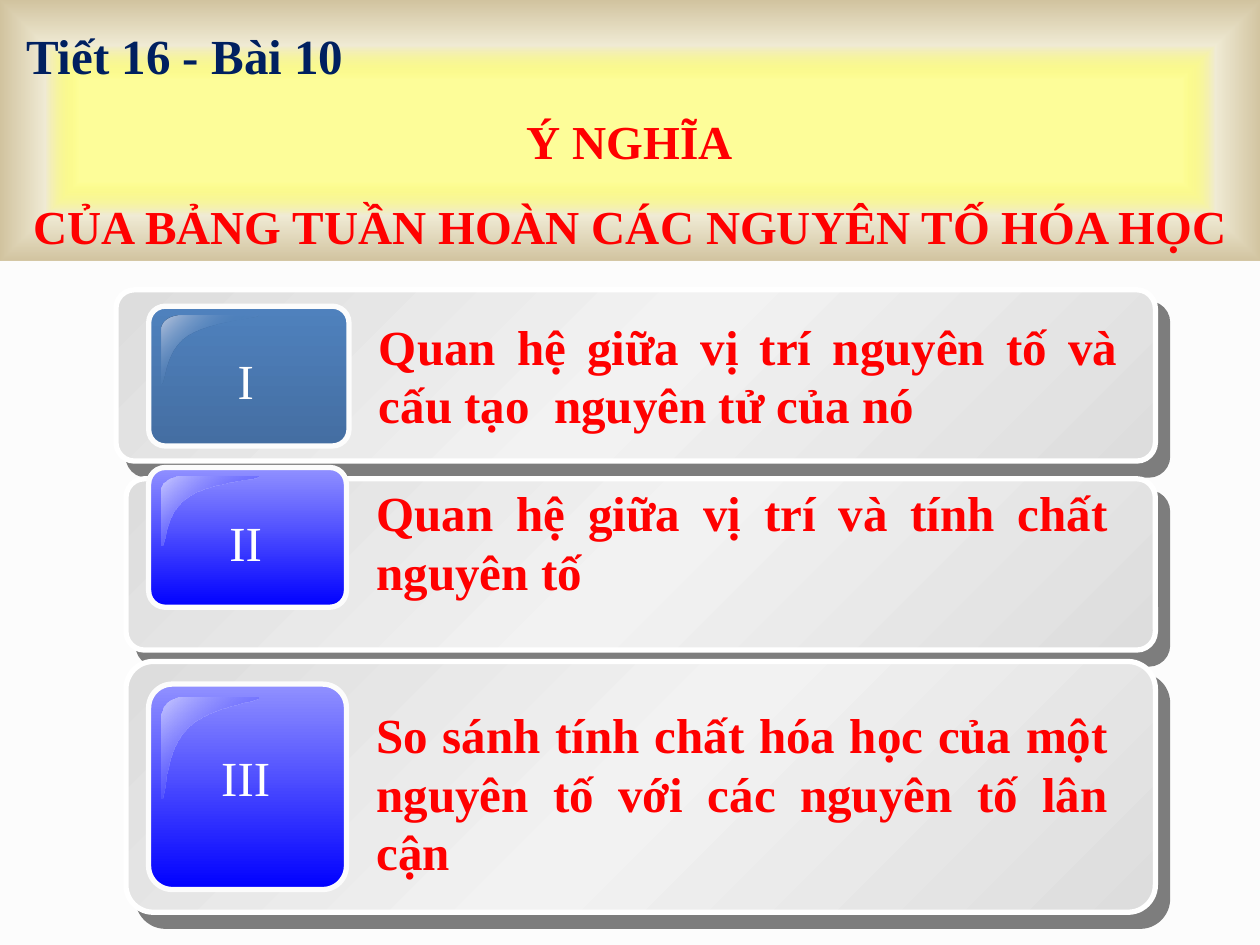
from lxml import etree
from pptx import Presentation
from pptx.dml.color import RGBColor
from pptx.enum.shapes import MSO_SHAPE as Shape
from pptx.enum.text import MSO_ANCHOR as Anchor, PP_ALIGN as Align
from pptx.oxml import parse_xml
from pptx.oxml.ns import nsdecls, qn
from pptx.util import Inches, Pt

FONT = "Times New Roman"
RED, NAVY, WHITE, PAPER = "FF0000", "002060", "FFFFFF", "FCFCFC"

# Header: text, size, colour, alignment, line spacing
HEADER = [
    ("Tiết 16 - Bài 10", 28, NAVY, Align.LEFT, 1),
    ("Ý NGHĨA", 27, RED, Align.CENTER, 1.5),
    ("CỦA BẢNG TUẦN HOÀN CÁC NGUYÊN TỐ HÓA HỌC", 27, RED, Align.CENTER, 1.5),
]

# Gradient stops: position, colour, opacity in percent
HEADER_STOPS = [(39, "FFFF00", 39), (65, "F0EBD5", 100), (100, "D1C39F", 100)]
CARD_STOPS = [(0, "DDDDDD", 100), (50, "F2F2F2", 100), (100, "DDDDDD", 100)]
STEEL = {
    "tile": [(0, "4F81BD", 100), (100, "446EA2", 100)],
    "gloss": [(0, "BBC7DE", 100), (50, "4F81BD", 0), (100, "BBC7DE", 100)],
}
BLUE = {
    "tile": [(0, "9191FF", 100), (100, "0000FF", 100)],
    "gloss": [(0, "C9C9FF", 100), (100, "0000FF", 0)],
}

# Boxes are left, top, width, height in inches
SECTIONS = [
    dict(numeral="I", text="Quan hệ giữa vị trí nguyên tố và cấu tạo  nguyên tử của nó",
         colours=STEEL, card=(0.92, 2.3, 8.25, 1.36), tile=(1.18, 2.43, 1.59, 1.11),
         numeral_top=2.73, text_box=(2.91, 2.46, 6.06, 1.04)),
    dict(numeral="II", text="Quan hệ giữa vị trí và tính chất nguyên tố",
         colours=BLUE, card=(1, 3.8, 8.17, 1.36), tile=(1.18, 3.71, 1.57, 1.11),
         numeral_top=4.02, text_box=(2.89, 3.78, 6, 1.04)),
    dict(numeral="III", text="So sánh tính chất hóa học của một nguyên tố với các nguyên tố lân cận",
         colours=BLUE, card=(1, 5.25, 8.17, 1.99), tile=(1.18, 5.43, 1.57, 1.63),
         numeral_top=5.88, text_box=(2.89, 5.54, 6, 1.6)),
]

# Gloss outline as cubic curves in fractions of its own box
GLOSS_CURVES = [
    [(0.2, 0), (0.09, 0), (0, 0.09), (0, 0.2)],
    [(0, 0.98), (0.05, 1), (0.02, 0.52), (0.27, 0.29)],
    [(0.27, 0.29), (0.52, 0.07), (1, 0.05), (0.98, 0)],
]


def rgb(colour):
    return RGBColor.from_string(colour)


def inches(box):
    return [Inches(value) for value in box]


def gradient(shape, stops, angle=None):
    """Linear fill at an angle, or a fill towards the centre without one."""
    stop_xml = "".join(
        f'<a:gs pos="{pos * 1000}"><a:srgbClr val="{colour}">'
        f'<a:alpha val="{opacity * 1000}"/></a:srgbClr></a:gs>'
        for pos, colour, opacity in stops)
    if angle is None:
        way = ('<a:path path="shape"><a:fillToRect l="50000" t="50000" '
               'r="50000" b="50000"/></a:path>')
    else:
        way = f'<a:lin ang="{angle * 60000}" scaled="1"/>'
    geometry = shape._element.spPr.find(qn("a:prstGeom"))
    if geometry is None:
        geometry = shape._element.spPr.find(qn("a:custGeom"))
    geometry.addnext(parse_xml(
        f'<a:gradFill {nsdecls("a")} rotWithShape="1">'
        f'<a:gsLst>{stop_xml}</a:gsLst>{way}</a:gradFill>'))


def outline(shape, colour=None):
    shape.shadow.inherit = False
    if colour:
        shape.line.color.rgb = rgb(colour)
        shape.line.width = Pt(3)
    else:
        shape.line.fill.background()


def drop_shadow(shape):
    effects = shape._element.spPr.find(qn("a:effectLst"))
    cast = etree.SubElement(effects, qn("a:outerShdw"), blurRad="0",
                            dist=str(Pt(10.6)), dir=str(49 * 60000),
                            algn="ctr", rotWithShape="0")
    black = etree.SubElement(cast, qn("a:srgbClr"), val="000000")
    etree.SubElement(black, qn("a:alpha"), val="50000")


def style(paragraph, size, colour, align, bold=True):
    paragraph.alignment = align
    font = paragraph.font
    font.name, font.size, font.bold = FONT, Pt(size), bold
    font.color.rgb = rgb(colour)


def add_panel(shapes, box, corner, stops, angle, line):
    panel = shapes.add_shape(Shape.ROUNDED_RECTANGLE, *inches(box))
    panel.adjustments[0] = corner
    gradient(panel, stops, angle)
    outline(panel, line)
    return panel


def add_label(shapes, box, text, colour, align, bold, wrap):
    frame = shapes.add_textbox(*inches(box)).text_frame
    frame.word_wrap = wrap
    frame.text = text
    style(frame.paragraphs[0], 28, colour, align, bold)


def curve_points(curve, steps=12):
    for step in range(steps + 1):
        t = step / steps
        weights = ((1 - t) ** 3, 3 * t * (1 - t) ** 2, 3 * t * t * (1 - t), t ** 3)
        yield tuple(sum(w * point[axis] for w, point in zip(weights, curve))
                    for axis in (0, 1))


def add_gloss(shapes, tile, stops):
    left, top, _, tile_height = tile
    width, height = 0.79, tile_height / 2
    left, top = left + 0.1, top + 0.065 * tile_height
    points = [(Inches(left + x * width), Inches(top + y * height))
              for curve in GLOSS_CURVES for x, y in curve_points(curve)]
    builder = shapes.build_freeform(*points[0])
    builder.add_line_segments(points[1:], close=True)
    gloss = builder.convert_to_shape()
    gradient(gloss, stops, 45)
    outline(gloss)


def add_section(slide, section):
    shapes = slide.shapes.add_group_shape().shapes
    tile, colours = section["tile"], section["colours"]
    drop_shadow(add_panel(shapes, section["card"], 0.109, CARD_STOPS, 45, WHITE))
    add_panel(shapes, tile, 0.119, colours["tile"], 90, PAPER)
    add_gloss(shapes, tile, colours["gloss"])
    add_label(shapes, (1.65, section["numeral_top"], 0.6, 0.57), section["numeral"],
              WHITE, Align.CENTER, False, False)
    add_label(shapes, section["text_box"], section["text"], RED, Align.JUSTIFY, True, True)


def add_header(slide):
    header = slide.shapes.add_shape(Shape.RECTANGLE, *inches((0, 0, 10, 2.07)))
    gradient(header, HEADER_STOPS)
    outline(header)
    frame = header.text_frame
    frame.word_wrap = True
    frame.vertical_anchor = Anchor.MIDDLE
    frame.margin_top = Inches(0.2)
    frame.text = "\n".join(line[0] for line in HEADER)
    for paragraph, (_, size, colour, align, spacing) in zip(frame.paragraphs, HEADER):
        style(paragraph, size, colour, align)
        paragraph.line_spacing = spacing
    # The lesson number starts slightly inside the header's margin
    frame.paragraphs[0]._p.get_or_add_pPr().set("marL", str(Inches(0.11)))


def main():
    deck = Presentation()
    deck.slide_width, deck.slide_height = Inches(10), Inches(7.5)
    slide = deck.slides.add_slide(deck.slide_layouts[6])
    slide.background.fill.solid()
    slide.background.fill.fore_color.rgb = rgb(PAPER)
    for section in SECTIONS:
        add_section(slide, section)
    add_header(slide)
    deck.save("out.pptx")


if __name__ == "__main__":
    main()
